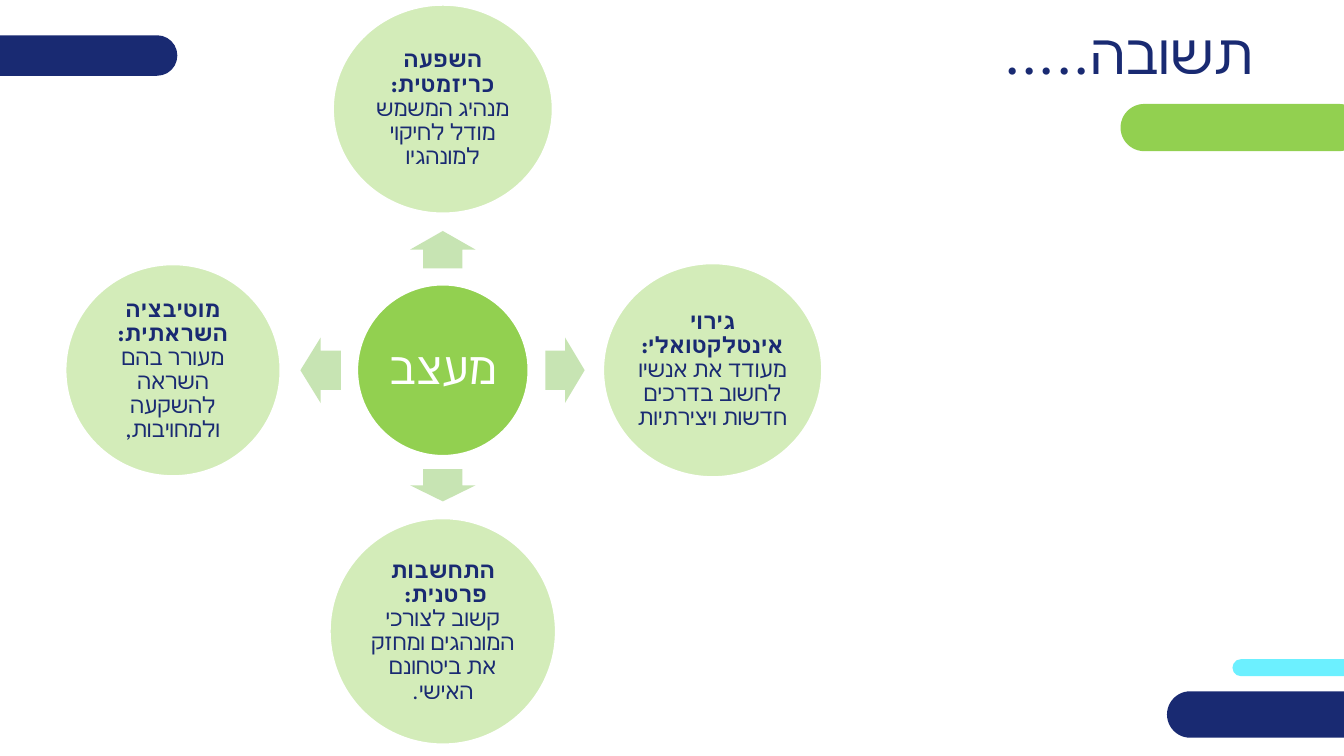
"""Build the slide on the four traits of a shaping leader."""
from copy import deepcopy
from math import cos, radians, sin

from pptx import Presentation
from pptx.dml.color import RGBColor
from pptx.enum import shapes, text
from pptx.oxml import ns
from pptx.util import Cm, Pt

NAVY = RGBColor(0x19, 0x2A, 0x72)
GREEN = RGBColor(0x92, 0xD0, 0x50)
CYAN = RGBColor(0x6C, 0xF0, 0xFF)
PALE = RGBColor(0xD3, 0xEC, 0xB9)
SAGE = RGBColor(0xC7, 0xE4, 0xB3)
WHITE = RGBColor(0xFF, 0xFF, 0xFF)
FONT = "League Spartan"
KIND = shapes.MSO_SHAPE

TITLE = "תשובה....."
HUB = "מעצב"
# angle, width, height, arrow distance, arrow length, heading, body
TRAITS = [
    (270, 5.56, 5.28, 3.04, 0.94, "השפעה כריזמטית: ", "מנהיג המשמש מודל לחיקוי למונהגיו"),
    (0, 5.54, 5.41, 3.08, 0.99, "גירוי אינטלקטואלי: ",
     "מעודד את אנשיו לחשוב בדרכים חדשות ויצירתיות"),
    (90, 5.72, 5.72, 2.9, 0.81, "התחשבות פרטנית: \v",
     "קשוב לצורכי המונהגים ומחזק את ביטחונם האישי."),
    (180, 5.44, 5.36, 3.08, 1.02, "מוטיבציה השראתית: ",
     "מעורר בהם השראה להשקעה ולמחויבות,"),
]
# left, top, width, height, colour
BARS = [
    (31.06, 16.61, 4.42, 0.43, CYAN),
    (28.24, 2.62, 6.1, 1.19, GREEN),
    (-1.35, 0.89, 5.82, 1.02, NAVY),
    (29.41, 17.42, 6.1, 1.17, NAVY),
]
MID_X, MID_Y = 11.16, 9.33
STEP_X, STEP_Y = 6.8, 6.58
HUB_SIZE, ARROW_WIDTH = 4.34, 1.65


def style(run, size, color, bold=False):
    """Set the font of a run, for Hebrew letters too."""
    font = run.font
    font.name, font.size, font.bold = FONT, Pt(size), bold
    font.color.rgb = color
    props = run._r.get_or_add_rPr()
    props.makeelement(ns.qn("a:cs"), {})
    script = props.makeelement(ns.qn("a:cs"), {"typeface": FONT})
    props.find(ns.qn("a:latin")).addnext(script)


def center(frame, inset):
    """Center a text frame and make it read right to left."""
    frame.word_wrap = True
    frame.auto_size = text.MSO_AUTO_SIZE.NONE
    frame.vertical_anchor = text.MSO_ANCHOR.MIDDLE
    frame.margin_left = frame.margin_right = Cm(inset)
    frame.margin_top = frame.margin_bottom = Cm(inset)
    para = frame.paragraphs[0]
    para.alignment = text.PP_ALIGN.CENTER
    para._p.get_or_add_pPr().set("rtl", "1")
    return para


def draw(slide, kind, left, top, width, height, color):
    """Add a plain filled shape."""
    shape = slide.shapes.add_shape(kind, Cm(left), Cm(top), Cm(width), Cm(height))
    shape.shadow.inherit = False
    shape.fill.solid()
    shape.fill.fore_color.rgb = color
    shape.line.fill.background()
    return shape


def disc(slide, x, y, width, height, color, words, inset):
    """Add a circle about a point and return its paragraph."""
    shape = draw(slide, KIND.OVAL, x - width / 2, y - height / 2, width, height, color)
    shape.line.color.rgb = WHITE
    shape.line.width = Pt(2)
    shape.text_frame.text = words
    para = center(shape.text_frame, inset)
    para.line_spacing = 0.9
    return para


def main():
    """Lay out the slide and save it."""
    deck = Presentation()
    deck.slide_width, deck.slide_height = Cm(33.87), Cm(19.05)
    slide = deck.slides.add_slide(deck.slide_layouts[5])

    for *box, color in BARS:
        draw(slide, KIND.ROUNDED_RECTANGLE, *box, color).adjustments[0] = 0.5

    title = slide.shapes.title
    title.left, title.top, title.width, title.height = Cm(23.7), Cm(0.43), Cm(9.47), Cm(1.78)
    title.text_frame.text = TITLE
    style(center(title.text_frame, 0.13).runs[0], 40, NAVY)

    hub = disc(slide, MID_X, MID_Y, HUB_SIZE, HUB_SIZE, GREEN, HUB, 0.1)
    style(hub.runs[0], 32, WHITE)

    for angle, width, height, gap, length, head, body in TRAITS:
        dx, dy = cos(radians(angle)), sin(radians(angle))
        arrow = draw(slide, KIND.RIGHT_ARROW, MID_X + gap * dx - length / 2,
                     MID_Y + gap * dy - ARROW_WIDTH / 2, length, ARROW_WIDTH, SAGE)
        arrow.adjustments[0], arrow.adjustments[1] = 0.6, 0.5
        arrow.rotation = angle

        para = disc(slide, MID_X + STEP_X * dx, MID_Y + STEP_Y * dy,
                    width, height, PALE, head, 0.05)
        para.add_run().text = body
        for run, bold in zip(para.runs, (True, False)):
            style(run, 16, NAVY, bold)
        for line in para._p.findall(ns.qn("a:br")):
            line.append(deepcopy(para.runs[0]._r.rPr))

    deck.save("out.pptx")


if __name__ == "__main__":
    main()
